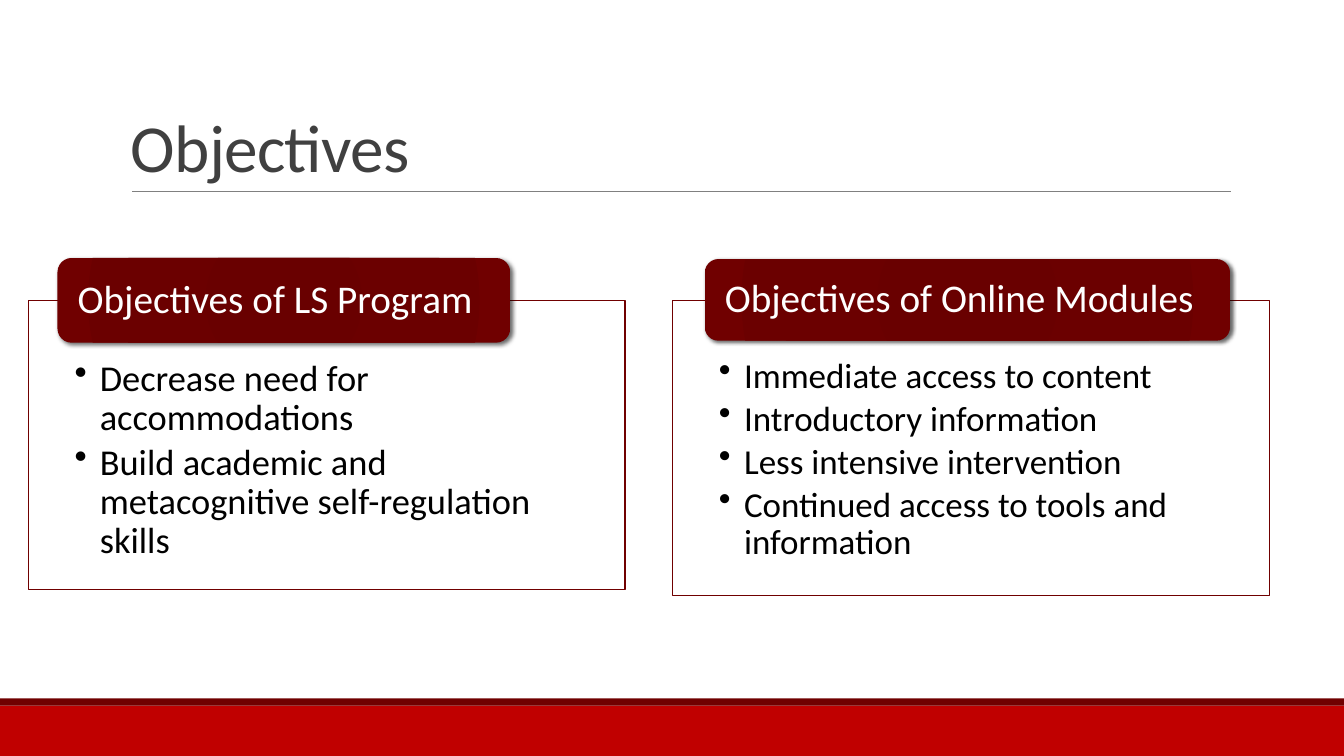
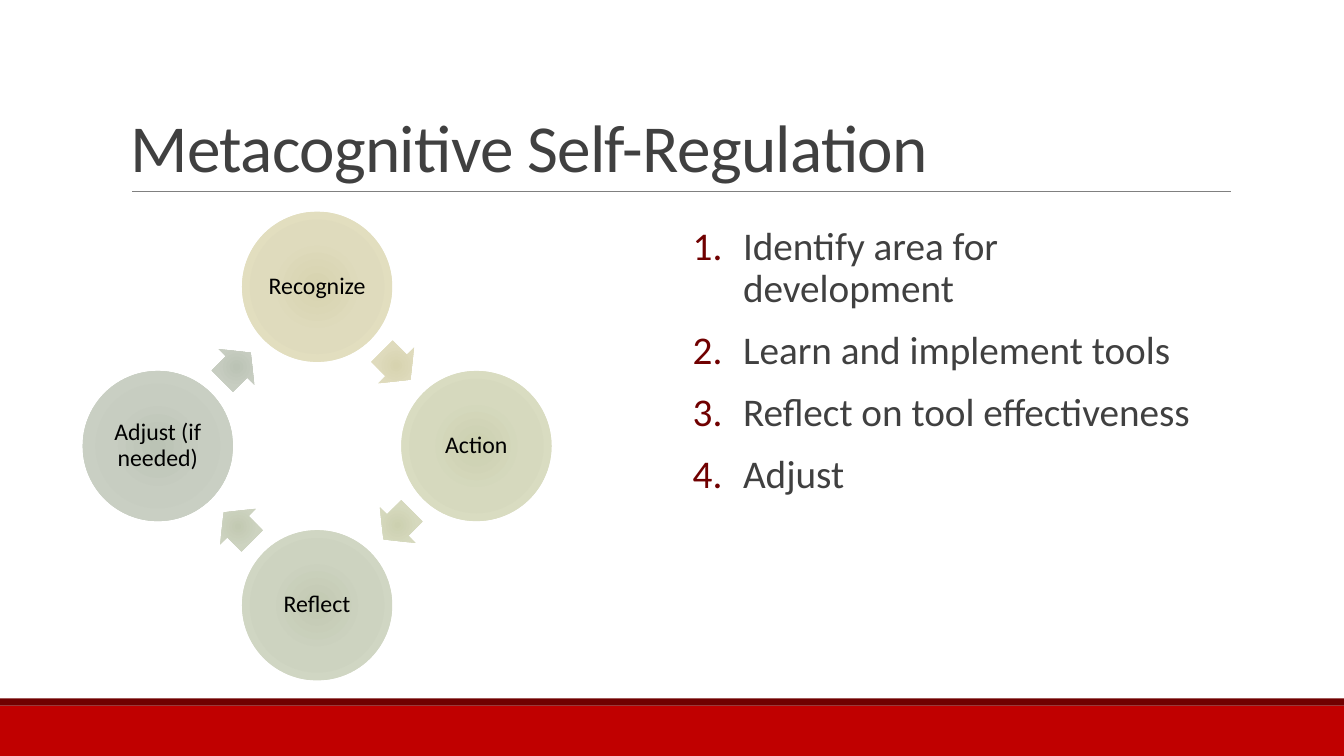
"""Build two slides on learning objectives and metacognitive self-regulation."""
import dataclasses
import math
import typing

import pptx
import pptx.dml.color
import pptx.enum.shapes
import pptx.enum.text
import pptx.oxml
import pptx.oxml.ns
import pptx.util

Inches = pptx.util.Inches
Pt = pptx.util.Pt
RGBColor = pptx.dml.color.RGBColor
Preset = pptx.enum.shapes.MSO_SHAPE
Anchor = pptx.enum.text.MSO_ANCHOR
Align = pptx.enum.text.PP_ALIGN

FONT = "Calibri"
RED = RGBColor(0xC0, 0x00, 0x00)
MAROON = RGBColor(0x70, 0x00, 0x00)
GRAY = RGBColor(0x80, 0x80, 0x80)
CHARCOAL = RGBColor(0x40, 0x40, 0x40)
BLACK = RGBColor(0x00, 0x00, 0x00)
WHITE = RGBColor(0xFF, 0xFF, 0xFF)

Box = tuple[float, float, float, float]
Gradient = tuple[tuple[int, RGBColor], ...]

HEADING_GRADIENT: Gradient = (
    (0, RGBColor(0x68, 0x00, 0x00)),
    (34, RGBColor(0x69, 0x00, 0x00)),
    (70, RGBColor(0x6B, 0x00, 0x00)),
    (100, MAROON),
)


@dataclasses.dataclass(frozen=True)
class Panel:
    """A titled box of bulleted objectives."""

    heading: str
    heading_box: Box
    body_box: Box
    insets: Box
    size: float
    objectives: tuple[str, ...]


@dataclasses.dataclass(frozen=True)
class Stage:
    """One step of the self-regulation cycle, with its inner, middle and outer tints."""

    label: str
    inner: RGBColor
    middle: RGBColor
    outer: RGBColor

    def gradient(self) -> Gradient:
        """Return the radial gradient stops."""
        return (0, self.inner), (45, self.middle), (100, self.outer)


PANELS = (
    Panel(
        "Objectives of LS Program",
        (0.57, 2.56, 4.49, 0.84),
        (0.28, 2.98, 5.92, 2.87),
        (0.46, 0.59, 0.46, 0.2),
        26,
        (
            "Decrease need for accommodations",
            "Build academic and metacognitive self-regulation skills",
        ),
    ),
    Panel(
        "Objectives of Online Modules",
        (6.99, 2.57, 5.21, 0.81),
        (6.67, 2.98, 5.92, 2.93),
        (0.46, 0.57, 0.46, 0.19),
        25,
        (
            "Immediate access to content",
            "Introductory information",
            "Less intensive intervention",
            "Continued access to tools and information",
        ),
    ),
)

STAGES = (
    Stage("Recognize", RGBColor(0xD7, 0xD3, 0xAF), RGBColor(0xDF, 0xDB, 0xBD), RGBColor(0xE5, 0xE1, 0xC1)),
    Stage("Action", RGBColor(0xCC, 0xD0, 0xB0), RGBColor(0xD6, 0xD9, 0xBE), RGBColor(0xDC, 0xDF, 0xC3)),
    Stage("Reflect", RGBColor(0xC2, 0xC9, 0xB2), RGBColor(0xCD, 0xD3, 0xC0), RGBColor(0xD3, 0xD9, 0xC5)),
    Stage("Adjust (if needed)", RGBColor(0xBB, 0xC3, 0xB5), RGBColor(0xC7, 0xCD, 0xC1), RGBColor(0xCD, 0xD4, 0xC7)),
)

STEPS = (
    "Identify area for development",
    "Learn and implement tools",
    "Reflect on tool effectiveness",
    "Adjust",
)

CYCLE_CENTER = (3.145, 4.425)
CYCLE_RADIUS = 1.58
STAGE_DIAMETER = 1.49
ARROW_SIZE = (0.4, 0.5)
ARROW_RADIUS = 1.12
ARROW_SETBACK = 0.01


def element(xml: str) -> typing.Any:
    """Parse a drawing element whose first tag still lacks its namespace."""
    tag, rest = xml.split(" ", 1)
    return pptx.oxml.parse_xml(f'{tag} {pptx.oxml.ns.nsdecls("a")} {rest}')


def fill_radial(shape: typing.Any, stops: Gradient) -> None:
    """Fill a shape with a circular gradient."""
    shape.fill.background()
    properties = shape._element.spPr
    stop_xml = "".join(
        f'<a:gs pos="{position * 1000}"><a:srgbClr val="{color}"/></a:gs>' for position, color in stops
    )
    gradient = element(
        f'<a:gradFill rotWithShape="1"><a:gsLst>{stop_xml}</a:gsLst><a:path path="circle">'
        '<a:fillToRect l="100000" t="100000" r="100000" b="100000"/></a:path></a:gradFill>'
    )
    properties.replace(properties.find(pptx.oxml.ns.qn("a:noFill")), gradient)


def add_preset(
    slide: typing.Any,
    preset: typing.Any,
    box: Box,
    fill: RGBColor | Gradient,
    outline: RGBColor | None = None,
) -> typing.Any:
    """Add a flat preset shape with a plain or radial fill."""
    shape = slide.shapes.add_shape(preset, *map(Inches, box))
    shape.shadow.inherit = False
    if isinstance(fill, RGBColor):
        shape.fill.solid()
        shape.fill.fore_color.rgb = fill
    else:
        fill_radial(shape, fill)
    if outline is None:
        shape.line.fill.background()
    else:
        shape.line.color.rgb = outline
        shape.line.width = Pt(1)
    return shape


def write(
    shape: typing.Any,
    lines: typing.Sequence[str],
    size: float,
    color: RGBColor,
    insets: Box,
    anchor: typing.Any = Anchor.TOP,
    align: typing.Any = Align.LEFT,
    line_spacing: float = 0.9,
) -> list[typing.Any]:
    """Write one paragraph per line and return the paragraphs."""
    frame = shape.text_frame
    frame.text = "\n".join(lines)
    frame.word_wrap = True
    frame.vertical_anchor = anchor
    frame.margin_left, frame.margin_top, frame.margin_right, frame.margin_bottom = map(Inches, insets)
    for paragraph in frame.paragraphs:
        paragraph.alignment = align
        paragraph.line_spacing = line_spacing
        for run in paragraph.runs:
            run.font.name = FONT
            run.font.size = Pt(size)
            run.font.color.rgb = color
    return list(frame.paragraphs)


def add_marker(paragraph: typing.Any, indent: float, *markers: str) -> None:
    """Give a paragraph a hanging indent and a bullet or number."""
    properties = paragraph._p.get_or_add_pPr()
    properties.set("marL", str(Inches(indent)))
    properties.set("indent", str(-Inches(indent)))
    for marker in markers:
        properties.append(element(marker))


def add_titled_slide(deck: typing.Any, title: str) -> typing.Any:
    """Add a slide with the shared footer bands, title and rule."""
    slide = deck.slides.add_slide(deck.slide_layouts[6])
    add_preset(slide, Preset.RECTANGLE, (0, 7, 13.33, 0.5), RED)
    add_preset(slide, Preset.RECTANGLE, (0, 6.93, 13.33, 0.07), MAROON)
    rule = slide.shapes.add_connector(
        pptx.enum.shapes.MSO_CONNECTOR.STRAIGHT, Inches(1.31), Inches(1.9), Inches(12.21), Inches(1.9)
    )
    rule.line.color.rgb = GRAY
    rule.line.width = Pt(0.5)
    rule._element.spPr.append(element("<a:effectLst />"))
    heading = slide.shapes.add_textbox(Inches(1.2), Inches(0.31), Inches(11), Inches(1.59))
    paragraphs = write(
        heading, [title], 48, CHARCOAL, (0.1, 0.05, 0.1, 0.05), Anchor.BOTTOM, line_spacing=0.85
    )
    paragraphs[0].runs[0].font._element.set("spc", "-50")
    return slide


def add_panel(slide: typing.Any, panel: Panel) -> None:
    """Draw an outlined list of objectives under its raised heading."""
    body = add_preset(slide, Preset.RECTANGLE, panel.body_box, WHITE, MAROON)
    for paragraph in write(body, panel.objectives, panel.size, BLACK, panel.insets):
        paragraph.space_after = Pt(panel.size * 0.15)
        add_marker(paragraph, 0.25, '<a:buChar char="•"/>')
    heading = add_preset(slide, Preset.ROUNDED_RECTANGLE, panel.heading_box, HEADING_GRADIENT)
    shadow = element(
        f'<a:outerShdw blurRad="{Pt(3)}" dist="{Pt(2)}" dir="2700000" algn="tl" rotWithShape="0">'
        f'<a:srgbClr val="{BLACK}"><a:alpha val="60000"/></a:srgbClr></a:outerShdw>'
    )
    heading._element.spPr.find(pptx.oxml.ns.qn("a:effectLst")).append(shadow)
    write(heading, [panel.heading], 28, WHITE, (0.16, 0, 0.16, 0), Anchor.MIDDLE)


def centered_box(x: float, y: float, width: float, height: float) -> Box:
    """Return the box of the given size around a point."""
    return x - width / 2, y - height / 2, width, height


def add_cycle(slide: typing.Any, stages: typing.Sequence[Stage]) -> None:
    """Draw the stages clockwise from the top, each followed by an arrow."""
    center_x, center_y = CYCLE_CENTER
    step = 360 / len(stages)
    for index, stage in enumerate(stages):
        angle = math.radians(index * step)
        x = center_x + CYCLE_RADIUS * math.sin(angle)
        y = center_y - CYCLE_RADIUS * math.cos(angle)
        box = centered_box(x, y, STAGE_DIAMETER, STAGE_DIAMETER)
        circle = add_preset(slide, Preset.OVAL, box, stage.gradient())
        write(circle, [stage.label], 17, BLACK, (0.02,) * 4, Anchor.MIDDLE, Align.CENTER)

        heading = (index + 0.5) * step
        angle = math.radians(heading)
        x = center_x + ARROW_RADIUS * math.sin(angle) - ARROW_SETBACK * math.cos(angle)
        y = center_y - ARROW_RADIUS * math.cos(angle) - ARROW_SETBACK * math.sin(angle)
        arrow = add_preset(slide, Preset.RIGHT_ARROW, centered_box(x, y, *ARROW_SIZE), stage.gradient())
        arrow.adjustments[0] = 0.6
        arrow.adjustments[1] = 0.5
        arrow.rotation = heading


def add_steps(slide: typing.Any, steps: typing.Sequence[str]) -> None:
    """Write the numbered steps beside the cycle."""
    listing = slide.shapes.add_textbox(Inches(6.87), Inches(2.2), Inches(5.15), Inches(2.73))
    for paragraph in write(listing, steps, 28, CHARCOAL, (0, 0.05, 0, 0.05)):
        paragraph.space_before = Pt(12)
        paragraph.space_after = Pt(2)
        add_marker(
            paragraph,
            0.5,
            f'<a:buClr ><a:srgbClr val="{MAROON}"/></a:buClr>',
            '<a:buAutoNum type="arabicPeriod"/>',
        )


def main() -> None:
    """Build and save the presentation."""
    deck = pptx.Presentation()
    deck.slide_width = Inches(13.33)
    deck.slide_height = Inches(7.5)
    objectives = add_titled_slide(deck, "Objectives")
    for panel in PANELS:
        add_panel(objectives, panel)
    regulation = add_titled_slide(deck, "Metacognitive Self-Regulation")
    add_cycle(regulation, STAGES)
    add_steps(regulation, STEPS)
    deck.save("out.pptx")


if __name__ == "__main__":
    main()
